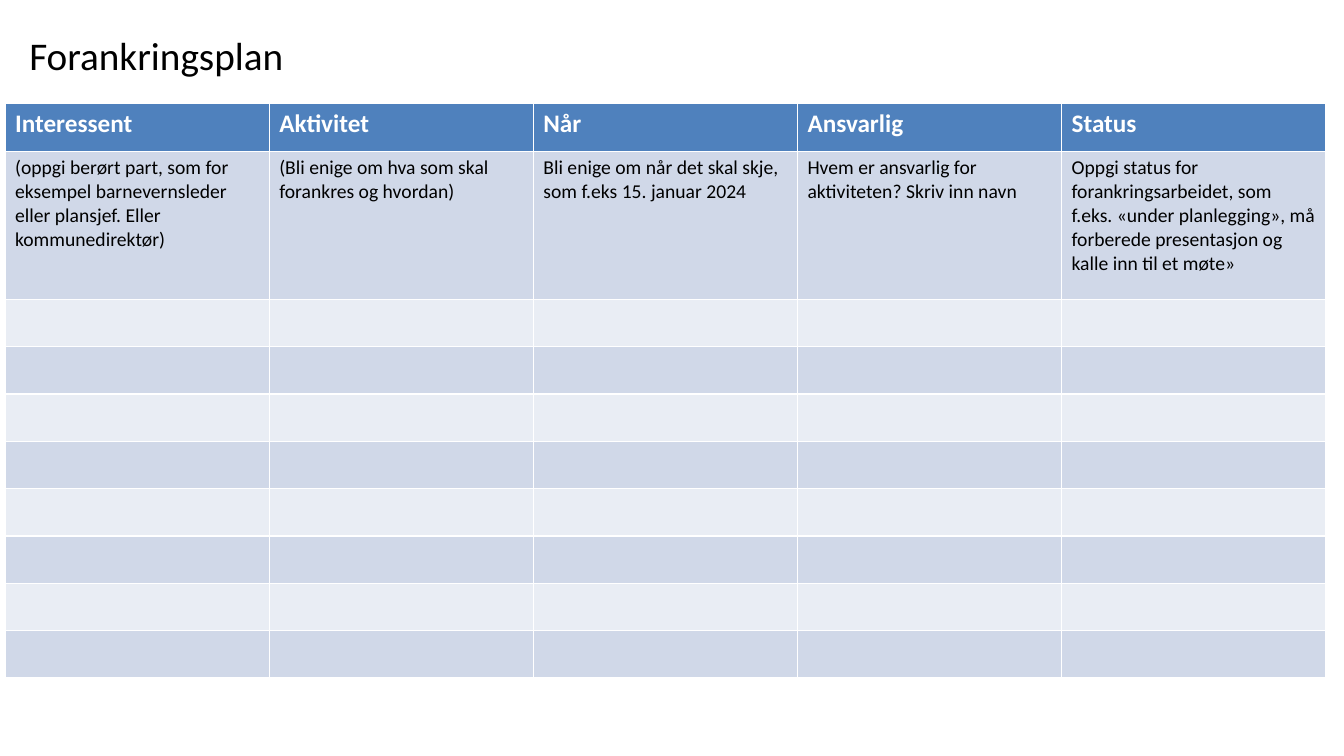
"""Build the Forankringsplan slide: a title above a stakeholder planning table."""
from typing import NamedTuple

from pptx import Presentation
from pptx.dml.color import RGBColor
from pptx.enum.text import MSO_ANCHOR, MSO_AUTO_SIZE, PP_ALIGN
from pptx.util import Inches, Pt

LEFT = PP_ALIGN.LEFT
MIDDLE = MSO_ANCHOR.MIDDLE
NO_AUTOFIT = MSO_AUTO_SIZE.NONE
FONT = "Calibri"
BLACK, WHITE = "000000", "FFFFFF"
HEADER_FILL = "4F81BD"
BAND_FILLS = ("E9EDF4", "D0D8E8")
ROW_COUNT = 10
ROW_HEIGHT, GUIDE_ROW_HEIGHT = 0.47, 1.47
COLUMN_WIDTH = 2.62


class PlanColumn(NamedTuple):
    heading: str
    guide: str


COLUMNS = (
    PlanColumn("Interessent", "(oppgi berørt part, som for eksempel barnevernsleder "
               "eller plansjef. Eller kommunedirektør)"),
    PlanColumn("Aktivitet", "(Bli enige om hva som skal forankres og hvordan)"),
    PlanColumn("Når", "Bli enige om når det skal skje, som f.eks 15. januar 2024"),
    PlanColumn("Ansvarlig", "Hvem er ansvarlig for aktiviteten? Skriv inn navn"),
    PlanColumn("Status", "Oppgi status for forankringsarbeidet, som f.eks. "
               "«under planlegging», må forberede presentasjon og kalle inn til et møte»"),
)


def rgb(value: str) -> RGBColor:
    return RGBColor.from_string(value)


def add_run(p, text: str, size: int, color: str, bold: bool = False) -> None:
    r = p.add_run()
    r.text = text
    r.font.name = FONT
    r.font.size = Pt(size)
    r.font.bold = bold
    r.font.color.rgb = rgb(color)


def add_title(s, text: str) -> None:
    sp = s.shapes.title
    sp.left, sp.top = Inches(0.19), Inches(0.26)
    sp.width, sp.height = Inches(11.6), Inches(0.57)
    tf = sp.text_frame
    tf.word_wrap = True
    tf.auto_size = NO_AUTOFIT
    tf.vertical_anchor = MIDDLE
    p = tf.paragraphs[0]
    p.alignment = LEFT
    add_run(p, text, 28, BLACK)


def add_plan_table(s, columns: tuple[PlanColumn, ...]) -> None:
    heights = [ROW_HEIGHT] * ROW_COUNT
    heights[1] = GUIDE_ROW_HEIGHT
    table = s.shapes.add_table(
        ROW_COUNT, len(columns), Inches(0.05), Inches(1.03),
        Inches(COLUMN_WIDTH * len(columns)), Inches(sum(heights))).table
    for column in table.columns:
        column.width = Inches(COLUMN_WIDTH)
    for i, (row, height) in enumerate(zip(table.rows, heights)):
        row.height = Inches(height)
        for cell in row.cells:
            cell.fill.solid()
            cell.fill.fore_color.rgb = rgb(BAND_FILLS[i % 2] if i else HEADER_FILL)
    for j, column in enumerate(columns):
        heading, guide = (table.cell(i, j).text_frame.paragraphs[0] for i in range(2))
        add_run(heading, column.heading, 18, WHITE, bold=True)
        add_run(guide, column.guide, 14, BLACK)


def main() -> None:
    prs = Presentation()
    prs.slide_width, prs.slide_height = Inches(13.33), Inches(7.5)
    s = prs.slides.add_slide(prs.slide_layouts.get_by_name("Title Only"))
    add_title(s, "Forankringsplan")
    add_plan_table(s, COLUMNS)
    prs.save("out.pptx")


if __name__ == "__main__":
    main()
